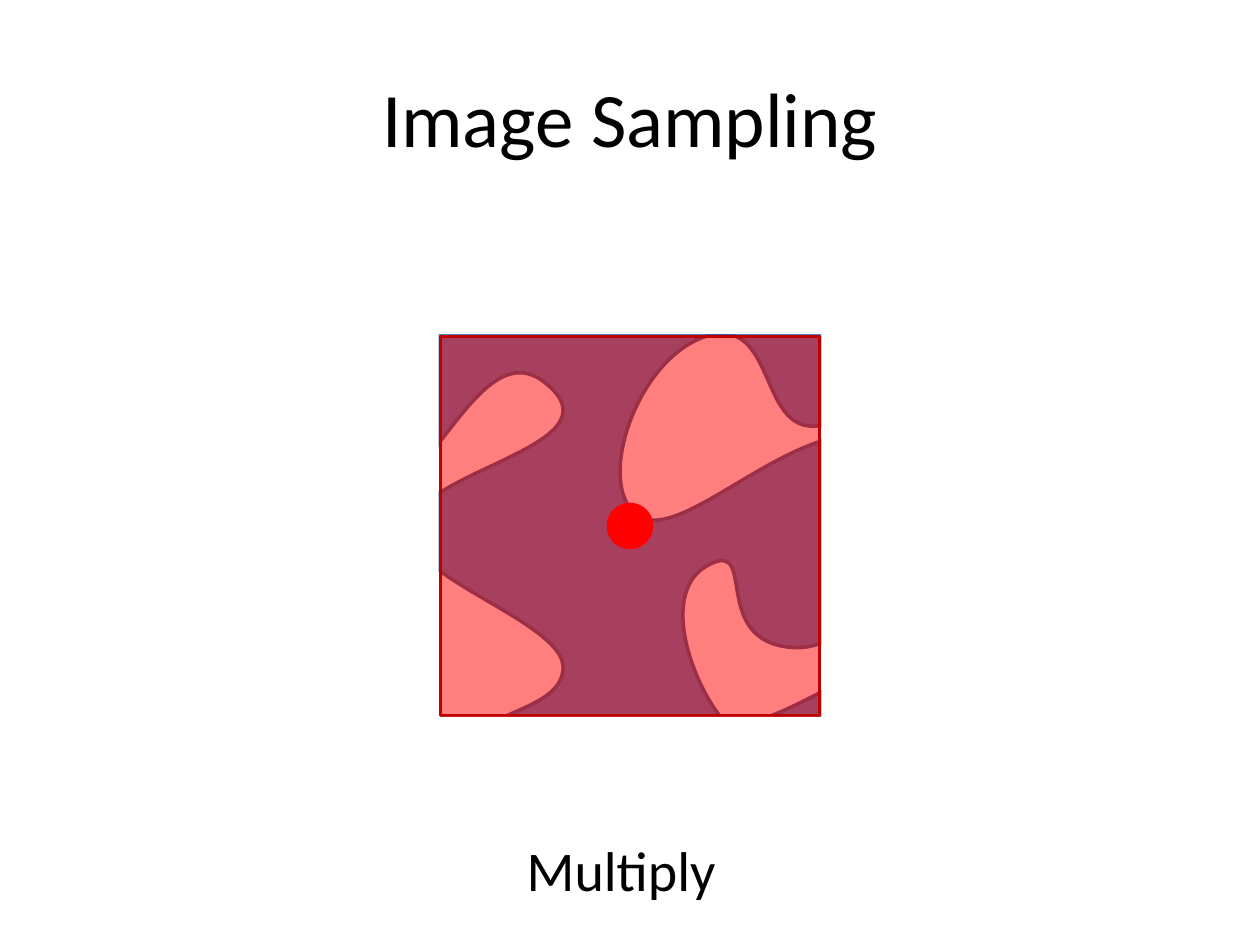
import pptx
import pptx.util
import pptx.dml.color
import pptx.enum.shapes
import pptx.enum.text
import pptx.oxml.ns
from lxml import etree

Pt = pptx.util.Pt
Kind = pptx.enum.shapes.MSO_SHAPE
Align = pptx.enum.text.PP_ALIGN
qn = pptx.oxml.ns.qn

TITLE = ("Image Sampling", 44, (36, 21.6, 648, 90))
LABEL = ("Multiply", 32, (211, 473.8, 288, 46))
CENTER = (360, 300.6)
PIXEL, DOT = 216.7, 26.6
MASKS = [
    (136.8, 108, 113.8, 347.8),
    (469.4, 113, 113.8, 347.8),
    (149, 118.8, 384.5, 72),
    (149, 409.7, 409, 65.5),
]
BOUNDS = (154.1, 132.5, 401.8, 335.5)
START = (312.5, 219.6)
CURVES = [
    [(352.1, 252.7), (253.4, 266.4), (235.4, 295.9)],
    [(217.4, 326.2), (324, 354.2), (321.8, 382.3)],
    [(319.7, 409.7), (262.1, 405.4), (259.9, 439.9)],
    [(257.8, 473.8), (329.8, 470.2), (402.5, 463.7)],
    [(475.9, 457.2), (581.8, 370.8), (550.1, 363.6)],
    [(519.1, 356.4), (429.1, 431.3), (411.8, 409.7)],
    [(394.6, 388.1), (376.6, 337), (405.4, 322.6)],
    [(433.4, 308.2), (404.6, 367.9), (454.3, 370.1)],
    [(504, 372.2), (550.8, 263.5), (502.6, 249.8)],
    [(454.3, 236.9), (389.5, 312.5), (364.3, 294.5)],
    [(339.1, 276.5), (365, 201.6), (406.1, 191.5)],
    [(446.4, 182.2), (432, 257.8), (475.9, 241.2)],
    [(519.8, 223.9), (534.2, 191.5), (464.4, 157.7)],
    [(394.6, 123.8), (248.4, 118.1), (190.8, 179.3)],
    [(132.5, 239.8), (151.2, 293.8), (198, 293.8)],
    [(244.8, 293.8), (272.9, 185.8), START],
]


def color(code):
    return pptx.dml.color.RGBColor.from_string(code)


def paint(shape, fill, line=None, alpha=None):
    shape.shadow.inherit = False
    shape.fill.solid()
    shape.fill.fore_color.rgb = color(fill)
    if alpha:
        tone = shape._element.spPr.find(qn("a:solidFill"))[0]
        etree.SubElement(tone, qn("a:alpha"), val=str(alpha * 1000))
    if line:
        shape.line.color.rgb = color(line)
        shape.line.width = Pt(2)
    else:
        shape.line.fill.background()


def write(shape, text, size):
    para = shape.text_frame.paragraphs[0]
    para.text = text
    para.alignment = Align.CENTER
    para.font.size = Pt(size)
    para.font.name = "Calibri"
    para.font.color.rgb = color("000000")


def middle(size):
    return [mid - size / 2 for mid in CENTER] + [size, size]


def add(shapes, kind, box):
    return shapes.add_shape(kind, *map(Pt, box))


def add_blob(shapes):
    left, top, wide, high = BOUNDS
    unit = 100
    build = shapes.build_freeform(0, 0, scale=Pt(1) / unit)
    right, low = round(wide * unit), round(high * unit)
    build.add_line_segments([(right, 0), (right, low), (0, low)])
    blob = build.convert_to_shape(Pt(left), Pt(top))
    trace = blob._element.spPr.find(".//" + qn("a:path"))
    for part in list(trace):
        trace.remove(part)
    for tag, points in [("moveTo", [START])] + [("cubicBezTo", c) for c in CURVES]:
        step = etree.SubElement(trace, qn("a:" + tag))
        for x, y in points:
            etree.SubElement(step, qn("a:pt"), x=str(round((x - left) * unit)),
                             y=str(round((y - top) * unit)))
    etree.SubElement(trace, qn("a:close"))
    return blob


def main():
    deck = pptx.Presentation()
    deck.slide_width, deck.slide_height = Pt(720), Pt(540)
    slide = deck.slides.add_slide(deck.slide_layouts[5])
    shapes = slide.shapes

    text, size, box = TITLE
    title = shapes.title
    title.left, title.top, title.width, title.height = map(Pt, box)
    title.text_frame.vertical_anchor = pptx.enum.text.MSO_ANCHOR.MIDDLE
    write(title, text, size)

    paint(add_blob(shapes), "4F81BD", "3A5F8C")

    text, size, box = LABEL
    label = shapes.add_textbox(*map(Pt, box))
    label.text_frame.word_wrap = True
    label.text_frame.auto_size = pptx.enum.text.MSO_AUTO_SIZE.SHAPE_TO_FIT_TEXT
    write(label, text, size)

    paint(add(shapes, Kind.RECTANGLE, middle(PIXEL)), "FF0000", "C00000", 50)
    paint(add(shapes, Kind.OVAL, middle(DOT)), "FF0000")
    for box in MASKS:
        paint(add(shapes, Kind.RECTANGLE, box), "FFFFFF")

    deck.save("out.pptx")


if __name__ == "__main__":
    main()
